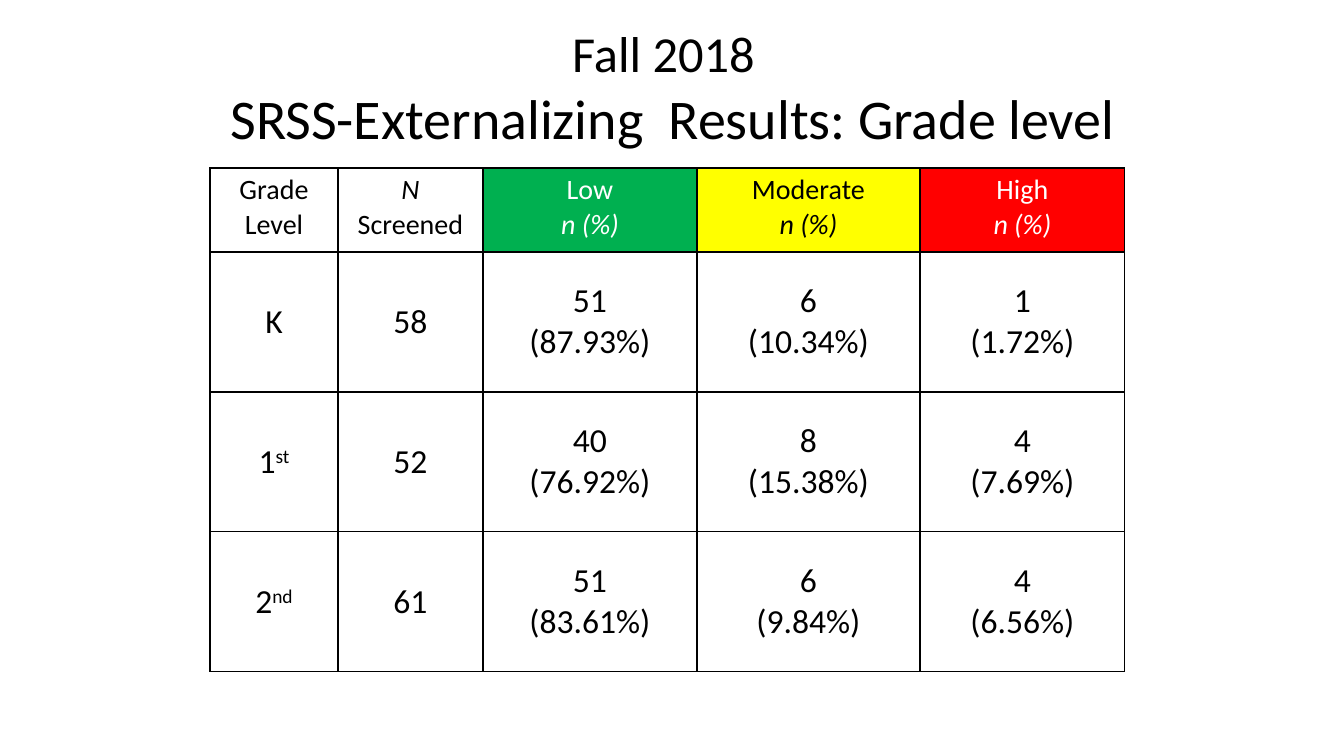
from lxml.etree import SubElement
from pptx import Presentation
from pptx.dml.color import RGBColor
from pptx.enum.text import MSO_ANCHOR, PP_ALIGN
from pptx.oxml.ns import qn
from pptx.util import Emu, Pt

COLORS = {
    "black": "000000",
    "white": "FFFFFF",
    "low": "00B050",
    "moderate": "FFFF00",
    "high": "FF0000",
}
FONT = "Calibri"
EMU_PER_PX = 914400 / 100.8

COLUMN_WIDTHS = [128, 145, 214, 223, 205]
HEADER_HEIGHT, GRADE_HEIGHT = 84, 140

# Header cells: lines with their italic flag, fill, text colour
HEADERS = [
    ([("Grade Level", False)], "white", "black"),
    ([("N", True), ("Screened", False)], "white", "black"),
    ([("Low", False), ("n (%)", True)], "low", "white"),
    ([("Moderate", False), ("n (%)", True)], "moderate", "black"),
    ([("High", False), ("n (%)", True)], "high", "white"),
]

# Grade, ordinal suffix, number screened, then low, moderate and high results
GRADES = [
    ("K", "", "58", ("51", "(87.93%)"), ("6", "(10.34%)"), ("1", "(1.72%)")),
    ("1", "st", "52", ("40", "(76.92%)"), ("8", "(15.38%)"), ("4", "(7.69%)")),
    ("2", "nd", "61", ("51", "(83.61%)"), ("6", "(9.84%)"), ("4", "(6.56%)")),
]


def px(length):
    return Emu(round(length * EMU_PER_PX))


def rgb(name):
    return RGBColor.from_string(COLORS[name])


def write_lines(frame, lines, size, color="black"):
    """Write centred paragraphs, each given as (text, italic)."""
    for index, (text, italic) in enumerate(lines):
        paragraph = frame.add_paragraph() if index else frame.paragraphs[0]
        paragraph.alignment = PP_ALIGN.CENTER
        paragraph.add_run().text = text
        font = paragraph.font
        font.name, font.size, font.italic = FONT, Pt(size), italic
        font.color.rgb = rgb(color)


def add_heading(slide, text, box, size, anchor, line_spacing):
    frame = slide.shapes.add_textbox(*map(px, box)).text_frame
    frame.word_wrap = True
    frame.margin_left = frame.margin_right = 0
    frame.vertical_anchor = anchor
    write_lines(frame, [(text, False)], size)
    frame.paragraphs[0].line_spacing = line_spacing


def add_borders(cell):
    properties = cell._tc.get_or_add_tcPr()
    for side in ("lnL", "lnR", "lnT", "lnB"):
        line = SubElement(properties, qn(f"a:{side}"), w=str(Pt(1)))
        fill = SubElement(line, qn("a:solidFill"))
        SubElement(fill, qn("a:srgbClr"), val=COLORS["black"])


def fill_cell(cell, lines, size, fill="white", color="black",
              anchor=MSO_ANCHOR.MIDDLE):
    add_borders(cell)
    cell.fill.solid()
    cell.fill.fore_color.rgb = rgb(fill)
    cell.vertical_anchor = anchor
    write_lines(cell.text_frame, lines, size, color)


def add_superscript(cell, text):
    suffix = cell.text_frame.paragraphs[0].add_run()
    suffix.text = text
    suffix._r.get_or_add_rPr().set("baseline", "30000")


def add_results_table(slide, left, top):
    heights = [HEADER_HEIGHT] + [GRADE_HEIGHT] * len(GRADES)
    results = slide.shapes.add_table(
        len(heights), len(COLUMN_WIDTHS), px(left), px(top),
        px(sum(COLUMN_WIDTHS)), px(sum(heights))).table
    results.first_row = results.horz_banding = False
    for column, width in zip(results.columns, COLUMN_WIDTHS):
        column.width = px(width)
    for row, height in zip(results.rows, heights):
        row.height = px(height)

    # Header row
    for index, (lines, fill, color) in enumerate(HEADERS):
        fill_cell(results.cell(0, index), lines, 20, fill, color,
                  MSO_ANCHOR.TOP)

    # One row per grade
    for row, (grade, suffix, screened, *risks) in enumerate(GRADES, 1):
        for column, texts in enumerate([(grade,), (screened,), *risks]):
            fill_cell(results.cell(row, column),
                      [(text, False) for text in texts], 24)
        if suffix:
            add_superscript(results.cell(row, 0), suffix)


def main():
    presentation = Presentation()
    presentation.slide_width, presentation.slide_height = px(1344), px(756)
    slide = presentation.slides.add_slide(presentation.slide_layouts[6])

    # Headings
    add_heading(slide, "Fall 2018", (210, 17, 907, 68), 36,
                MSO_ANCHOR.TOP, 1.0)
    add_heading(slide, "SRSS-Externalizing  Results: Grade level",
                (219, 71, 907, 101), 40, MSO_ANCHOR.MIDDLE, 0.9)

    # Screening results
    add_results_table(slide, 210, 168)
    presentation.save("out.pptx")


if __name__ == "__main__":
    main()
